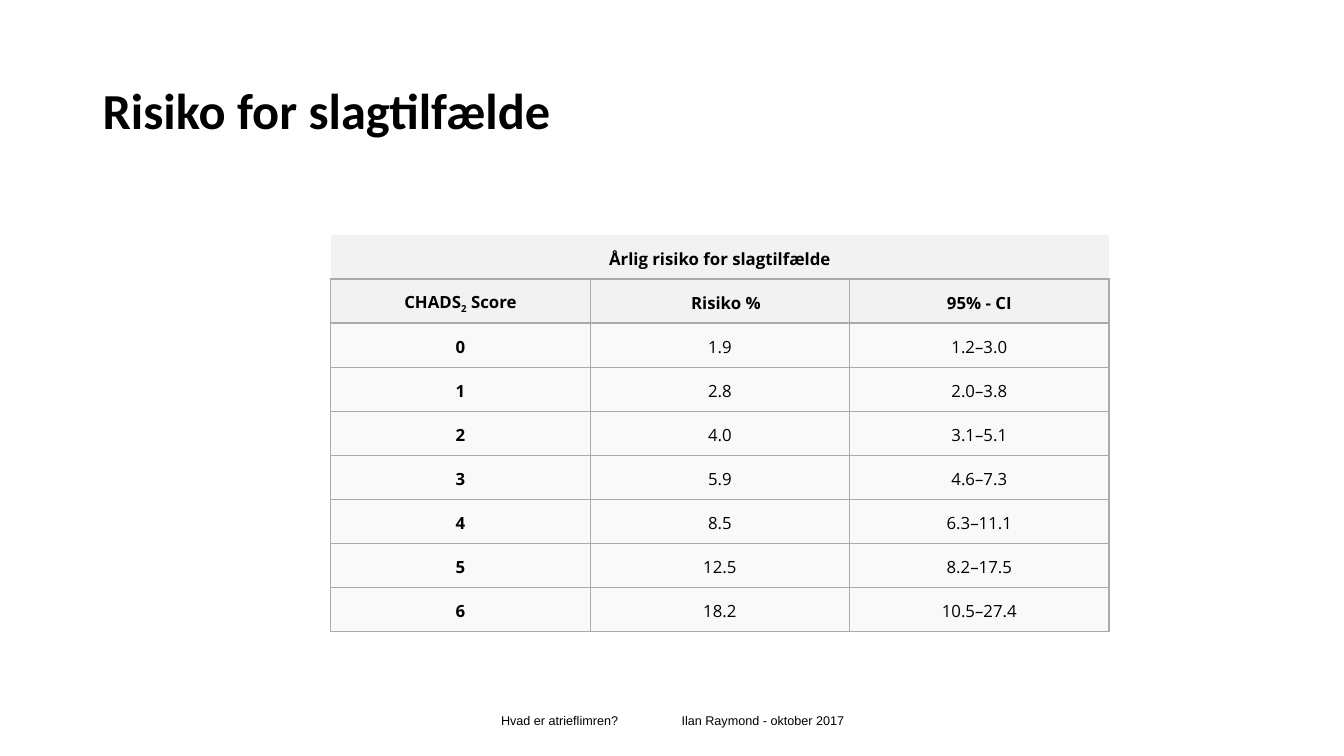
from lxml import etree
from pptx import Presentation
from pptx.dml.color import RGBColor
from pptx.enum.text import MSO_ANCHOR, PP_ALIGN
from pptx.oxml.ns import qn
from pptx.util import Inches, Pt

MIDDLE = MSO_ANCHOR.MIDDLE
LEFT, CENTER = PP_ALIGN.LEFT, PP_ALIGN.CENTER

COLORS = {"text": "000000", "header": "F2F2F2", "body": "F9F9F9", "border": "AAAAAA"}

TABLE_TITLE = "Årlig risiko for slagtilfælde"
SCORE_HEADING = ("CHADS", "2", " Score")
RISK_ROWS = [
    ("0", "1.9", "1.2–3.0"),
    ("1", "2.8", "2.0–3.8"),
    ("2", "4.0", "3.1–5.1"),
    ("3", "5.9", "4.6–7.3"),
    ("4", "8.5", "6.3–11.1"),
    ("5", "12.5", "8.2–17.5"),
    ("6", "18.2", "10.5–27.4"),
]


def rgb(name):
    return RGBColor.from_string(COLORS[name])


def add_run(paragraph, text, font, size, bold=False):
    run = paragraph.add_run()
    run.text = text
    run.font.name = font
    run.font.size = Pt(size)
    run.font.bold = bold
    run.font.color.rgb = rgb("text")
    return run


def add_text_frame(slide, box):
    frame = slide.shapes.add_textbox(*(Inches(v) for v in box)).text_frame
    frame.word_wrap = True
    frame.vertical_anchor = MIDDLE
    return frame


def add_title(slide, box, text):
    heading = add_text_frame(slide, box).paragraphs[0]
    heading.alignment = LEFT
    heading.line_spacing = 0.9
    add_run(heading, text, "Calibri", 36, bold=True)


def add_footer(slide, box, topic, author):
    frame = add_text_frame(slide, box)
    frame.margin_left = Inches(0.55)
    footer = frame.paragraphs[0]
    footer.alignment = LEFT
    # Tab stop that separates topic and author
    tabs = etree.SubElement(footer._p.get_or_add_pPr(), qn("a:tabLst"))
    etree.SubElement(tabs, qn("a:tab"), pos=str(Inches(1.79)), algn="l")
    add_run(footer, f"{topic}\t{author}", "Arial", 9)


def set_borders(cell, drawn_sides):
    properties = cell._tc.get_or_add_tcPr()
    for index, side in enumerate("LRTB"):
        line = etree.Element(qn(f"a:ln{side}"), w=str(Pt(1)))
        if side in drawn_sides:
            fill = etree.SubElement(line, qn("a:solidFill"))
            etree.SubElement(fill, qn("a:srgbClr"), val=COLORS["border"])
        else:
            etree.SubElement(line, qn("a:noFill"))
        properties.insert(index, line)


def fill_cell(cell, texts, fill, bold, sides="LRTB"):
    cell.fill.solid()
    cell.fill.fore_color.rgb = rgb(fill)
    set_borders(cell, sides)
    cell.vertical_anchor = MIDDLE
    cell.margin_left = cell.margin_right = Inches(0.03)
    cell.margin_top = cell.margin_bottom = Inches(0.03)
    paragraph = cell.text_frame.paragraphs[0]
    paragraph.alignment = CENTER
    paragraph.line_spacing = 1.15
    return [add_run(paragraph, text, "Open Sans", 12, bold) for text in texts]


def add_risk_table(slide, box):
    left, top, width, height = (Inches(v) for v in box)
    row_count, column_count = len(RISK_ROWS) + 2, len(RISK_ROWS[0])
    table = slide.shapes.add_table(row_count, column_count, left, top, width, height).table
    table.first_row = table.horz_banding = False
    for row in table.rows:
        row.height = height // row_count

    # Title row across all columns
    for column in range(column_count):
        texts = [TABLE_TITLE] if column == 0 else []
        fill_cell(table.cell(0, column), texts, "header", True, sides="B")
    table.cell(0, 0).merge(table.cell(0, column_count - 1))

    # Column headings
    score_runs = fill_cell(table.cell(1, 0), SCORE_HEADING, "header", True)
    score_runs[1].font._element.set("baseline", "-25000")
    risk_heading = table.cell(1, 1)
    fill_cell(risk_heading, ["Risiko %"], "header", True)
    risk_heading.margin_left = Inches(0.15)
    fill_cell(table.cell(1, 2), ["95% - CI"], "header", True)

    # Risk per score
    for row, values in enumerate(RISK_ROWS, start=2):
        for column, value in enumerate(values):
            fill_cell(table.cell(row, column), [value], "body", bold=column == 0)


def main():
    prs = Presentation()
    prs.slide_width, prs.slide_height = Inches(13.33), Inches(7.5)
    slide = prs.slides.add_slide(prs.slide_layouts[6])
    add_footer(slide, (4.42, 6.95, 4.5, 0.4),
               "Hvad er atrieflimren?", "Ilan Raymond - oktober 2017")
    add_title(slide, (0.92, 0.4, 11.5, 1.45), "Risiko for slagtilfælde")
    add_risk_table(slide, (3.28, 2.33, 7.72, 3.94))
    prs.save("out.pptx")


if __name__ == "__main__":
    main()
